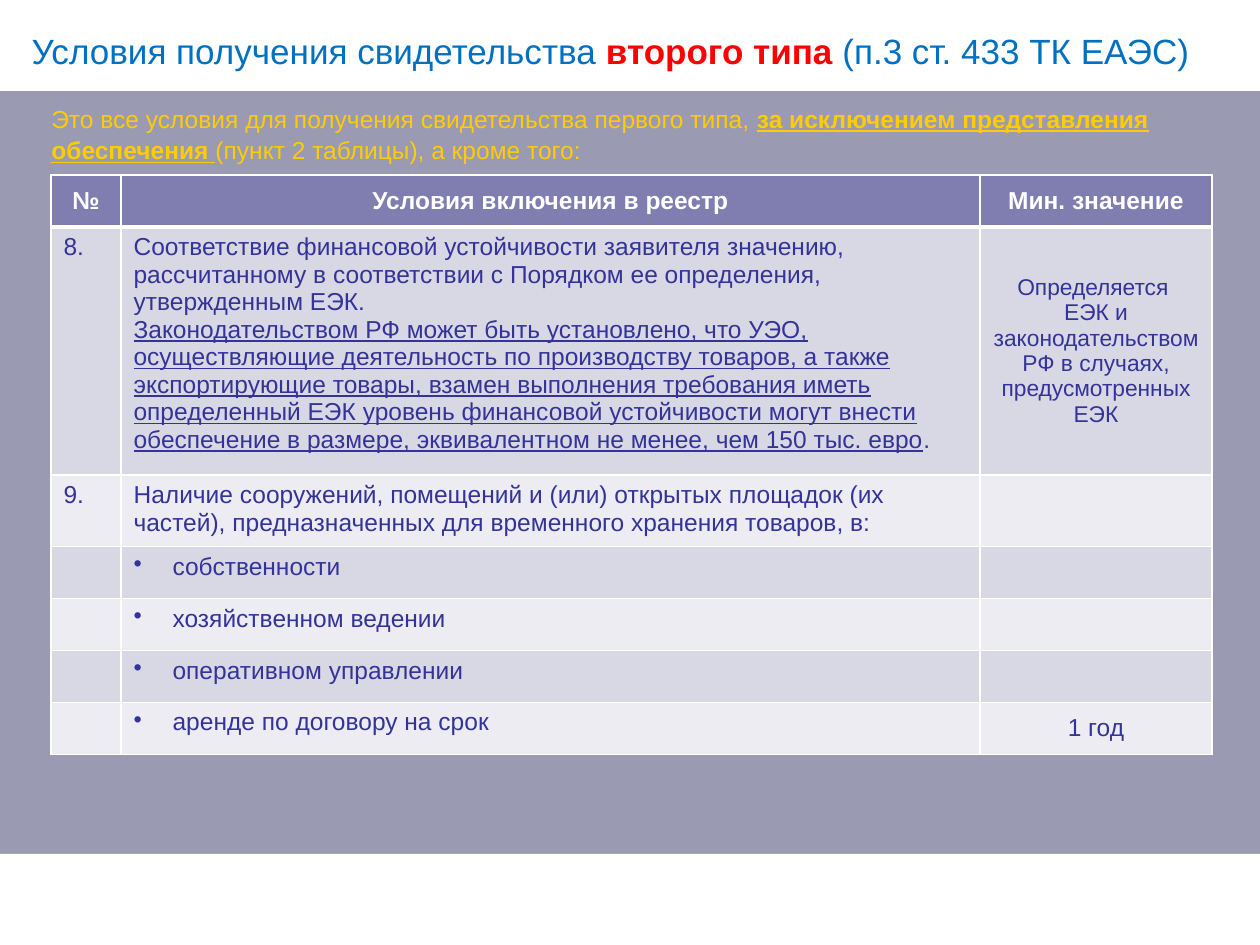
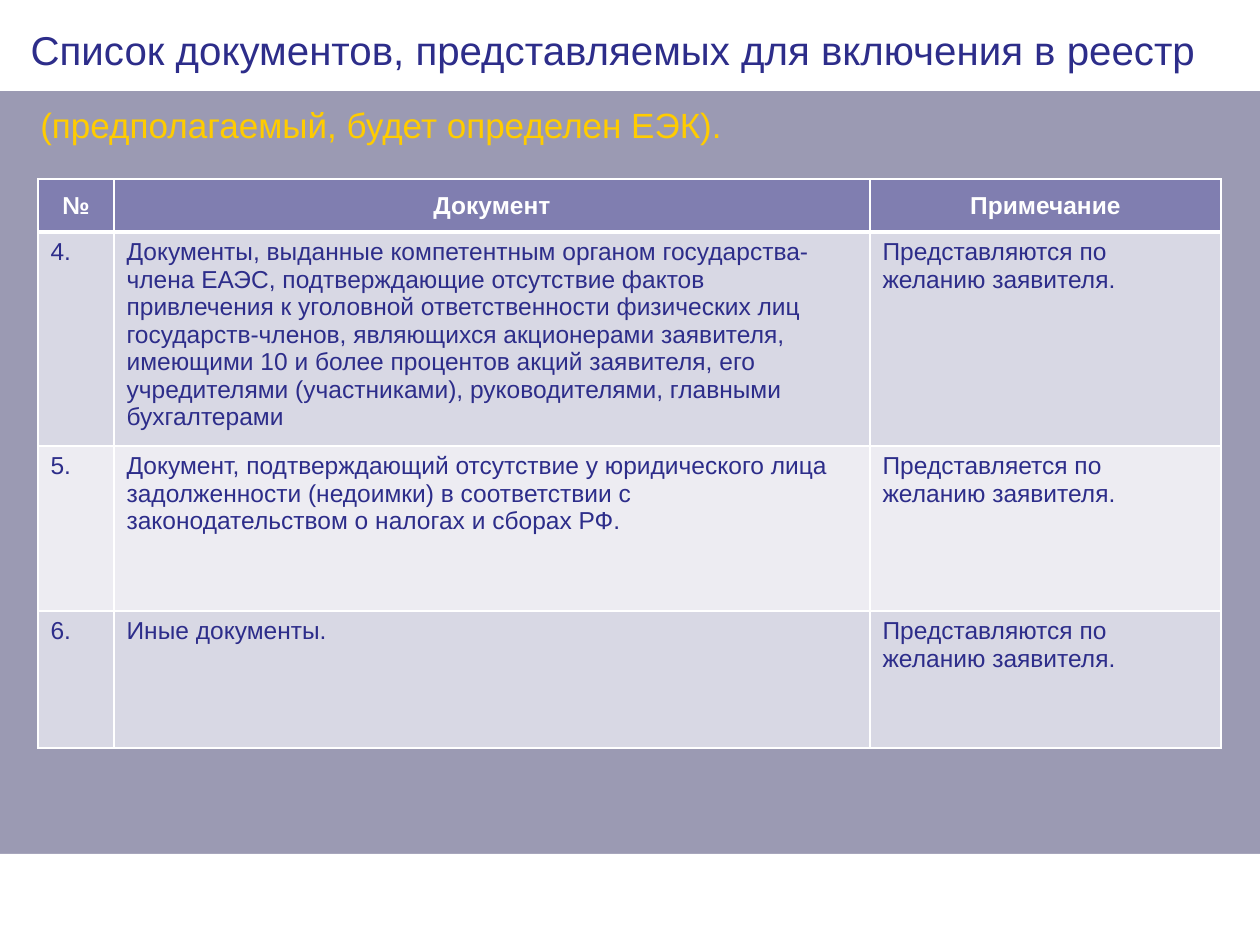
import pptx
import pptx.dml.color
import pptx.enum.shapes
import pptx.enum.text
import pptx.oxml
import pptx.oxml.ns
import pptx.util

COLORS = {
    "background": "9B9AB3", "white": "FFFFFF", "yellow": "FFCC00",
    "blue": "0070C0", "red": "FF0000", "indigo": "333399", "navy": "2D2D8A",
    "header": "807EB0", "odd": "D8D8E4", "even": "EDECF2",
}
FONT = "Arial"
SLIDE_WIDTH, SLIDE_HEIGHT, BAND_HEIGHT = 1260, 945, 91
BULLET_INDENT = 39
ANCHOR = pptx.enum.text.MSO_ANCHOR
ALIGN = pptx.enum.text.PP_ALIGN


def px(length):
    return pptx.util.Emu(round(length * 914400 / 126))


def rgb(name):
    return pptx.dml.color.RGBColor.from_string(COLORS[name])


class SlideBuilder:
    def __init__(self, deck):
        self.deck = deck
        self.layout = deck.slide_layouts[5]
        self.page = None

    def add_page(self):
        self.page = self.deck.slides.add_slide(self.layout)

    def add_shared_bands(self):
        fill = self.deck.slide_master.background.fill
        fill.solid()
        fill.fore_color.rgb = rgb("background")
        for number, top in enumerate((0, SLIDE_HEIGHT - BAND_HEIGHT)):
            band = self.page.shapes.add_shape(
                pptx.enum.shapes.MSO_SHAPE.RECTANGLE,
                px(0), px(top), px(SLIDE_WIDTH), px(BAND_HEIGHT))
            band.shadow.inherit = False
            band.fill.solid()
            band.fill.fore_color.rgb = rgb("white")
            band.line.fill.background()
            band.element.nvSpPr.cNvPr.id = 101 + number
            self.layout.shapes.element.insert(2 + number, band.element)

    def add_spans(self, para, spans, size, color, bold=False):
        for text, style in spans:
            span = para.add_run()
            span.text = text
            span.font.name = FONT
            span.font.size = pptx.util.Pt(size)
            span.font.bold = style.get("bold", bold)
            span.font.underline = style.get("underline", False)
            span.font.color.rgb = rgb(style.get("color", color))

    def add_title(self, place, spans, size, color):
        title = self.page.shapes.title
        title.left, title.top, title.width, title.height = map(px, place)
        frame = title.text_frame
        frame.auto_size = pptx.enum.text.MSO_AUTO_SIZE.NONE
        frame.vertical_anchor = ANCHOR.MIDDLE
        para = frame.paragraphs[0]
        para.alignment = ALIGN.LEFT
        self.add_spans(para, spans, size, color)

    def add_note(self, place, spans, size, anchor=ANCHOR.TOP, spacing=1.0):
        box = self.page.shapes.add_textbox(*map(px, place))
        frame = box.text_frame
        frame.word_wrap = True
        frame.vertical_anchor = anchor
        para = frame.paragraphs[0]
        para.line_spacing = spacing
        self.add_spans(para, spans, size, "yellow")

    def add_borders(self, cell, bottom):
        properties = cell._tc.get_or_add_tcPr()
        for side, width in (("L", 1), ("R", 1), ("T", 1), ("B", bottom)):
            properties.append(pptx.oxml.parse_xml(
                f'<a:ln{side} {pptx.oxml.ns.nsdecls("a")} w="{width * 12700}">'
                f'<a:solidFill><a:srgbClr val="{COLORS["white"]}"/></a:solidFill>'
                f'</a:ln{side}>'))

    def add_bullet(self, para):
        properties = para._p.get_or_add_pPr()
        properties.set("marL", str(px(BULLET_INDENT)))
        properties.set("indent", str(-px(BULLET_INDENT)))
        properties.append(pptx.oxml.parse_xml(
            f'<a:buChar {pptx.oxml.ns.nsdecls("a")} char="•"/>'))

    def fill_cell(self, cell, content, row, color, size=14, centered=False, bulleted=False):
        header = row == 0
        self.add_borders(cell, 3 if header else 1)
        cell.fill.solid()
        cell.fill.fore_color.rgb = rgb("header" if header else "odd" if row % 2 else "even")
        cell.vertical_anchor = ANCHOR.MIDDLE if header or centered else ANCHOR.TOP
        paragraphs = [[(content, {})]] if isinstance(content, str) else content
        if not content:
            return
        for index, spans in enumerate(paragraphs):
            frame = cell.text_frame
            para = frame.add_paragraph() if index else frame.paragraphs[0]
            if bulleted:
                self.add_bullet(para)
            para.alignment = ALIGN.CENTER if header or centered else ALIGN.LEFT
            self.add_spans(para, spans, size, "white" if header else color, bold=header)

    def add_table(self, left, top, widths, heights, rows, color, styles=None):
        table = self.page.shapes.add_table(
            len(rows), len(widths), px(left), px(top),
            px(sum(widths)), px(sum(heights))).table
        for column, width in zip(table.columns, widths):
            column.width = px(width)
        for line, height in zip(table.rows, heights):
            line.height = px(height)
        for row, contents in enumerate(rows):
            for column, content in enumerate(contents):
                style = (styles or {}).get((row, column), {})
                self.fill_cell(table.cell(row, column), content, row, color, **style)


def build_conditions(builder):
    builder.add_title((19, 21, 1205, 60), [
        ("Условия получения свидетельства ", {}),
        ("второго типа", {"color": "red", "bold": True}),
        (" (п.3 ст. 433 ТК ЕАЭС)", {}),
    ], 20, "blue")
    builder.add_note((39, 95, 1150, 81), [
        ("Это все условия для получения свидетельства первого типа, ", {}),
        ("за исключением представления обеспечения ", {"bold": True, "underline": True}),
        ("(пункт 2 таблицы), а кроме того:", {}),
    ], 14, spacing=1.08)
    stability = [
        [("Соответствие финансовой устойчивости заявителя значению, рассчитанному "
          "в соответствии с Порядком ее определения, утвержденным ЕЭК.", {})],
        [("Законодательством РФ может быть установлено, что УЭО, осуществляющие "
          "деятельность по производству товаров, а также экспортирующие товары, взамен "
          "выполнения требования иметь определенный ЕЭК уровень финансовой устойчивости "
          "могут внести обеспечение в размере, эквивалентном не менее, чем 150 тыс. евро",
          {"underline": True}), (".", {})],
    ]
    authority = [
        [("Определяется ", {})],
        [("ЕЭК и законодательством РФ в случаях, предусмотренных ЕЭК", {})],
    ]
    rows = [
        ("№", "Условия включения в реестр", "Мин. значение"),
        ("8.", stability, authority),
        ("9.", "Наличие сооружений, помещений и (или) открытых площадок (их частей), "
               "предназначенных для временного хранения товаров, в:", ""),
        ("", "собственности", ""),
        ("", "хозяйственном ведении", ""),
        ("", "оперативном управлении", ""),
        ("", "аренде по договору на срок", "1 год"),
    ]
    styles = {(row, 1): {"bulleted": True} for row in range(3, 7)}
    styles[1, 2] = {"centered": True, "size": 13}
    styles[6, 2] = {"centered": True}
    builder.add_table(51, 175, (70, 859, 232), (52, 233, 68) + (52,) * 4,
                      rows, "indigo", styles)


def build_documents(builder):
    builder.add_title((18, 15, 1203, 69), [
        ("Список документов, представляемых для включения в реестр", {}),
    ], 23, "navy")
    rows = [
        ("№", "Документ", "Примечание"),
        ("4.", "Документы, выданные компетентным органом государства-члена ЕАЭС, "
               "подтверждающие отсутствие фактов привлечения к уголовной ответственности "
               "физических лиц государств-членов, являющихся акционерами заявителя, "
               "имеющими 10 и более процентов акций заявителя, его учредителями "
               "(участниками), руководителями, главными бухгалтерами",
         "Представляются по желанию заявителя."),
        ("5.", "Документ, подтверждающий отсутствие у юридического лица задолженности "
               "(недоимки) в соответствии с законодательством о налогах и сборах РФ.",
         "Представляется по желанию заявителя."),
        ("6.", "Иные документы.", "Представляются по желанию заявителя."),
    ]
    builder.add_table(38, 179, (76, 756, 351), (53, 214, 165, 137), rows, "navy")
    builder.add_note((28, 95, 730, 58), [
        ("(предполагаемый, будет определен ЕЭК).", {}),
    ], 20, anchor=ANCHOR.MIDDLE)


def main():
    deck = pptx.Presentation()
    deck.slide_width, deck.slide_height = px(SLIDE_WIDTH), px(SLIDE_HEIGHT)
    builder = SlideBuilder(deck)
    builder.add_page()
    builder.add_shared_bands()
    build_conditions(builder)
    builder.add_page()
    build_documents(builder)
    deck.save("out.pptx")


if __name__ == "__main__":
    main()
